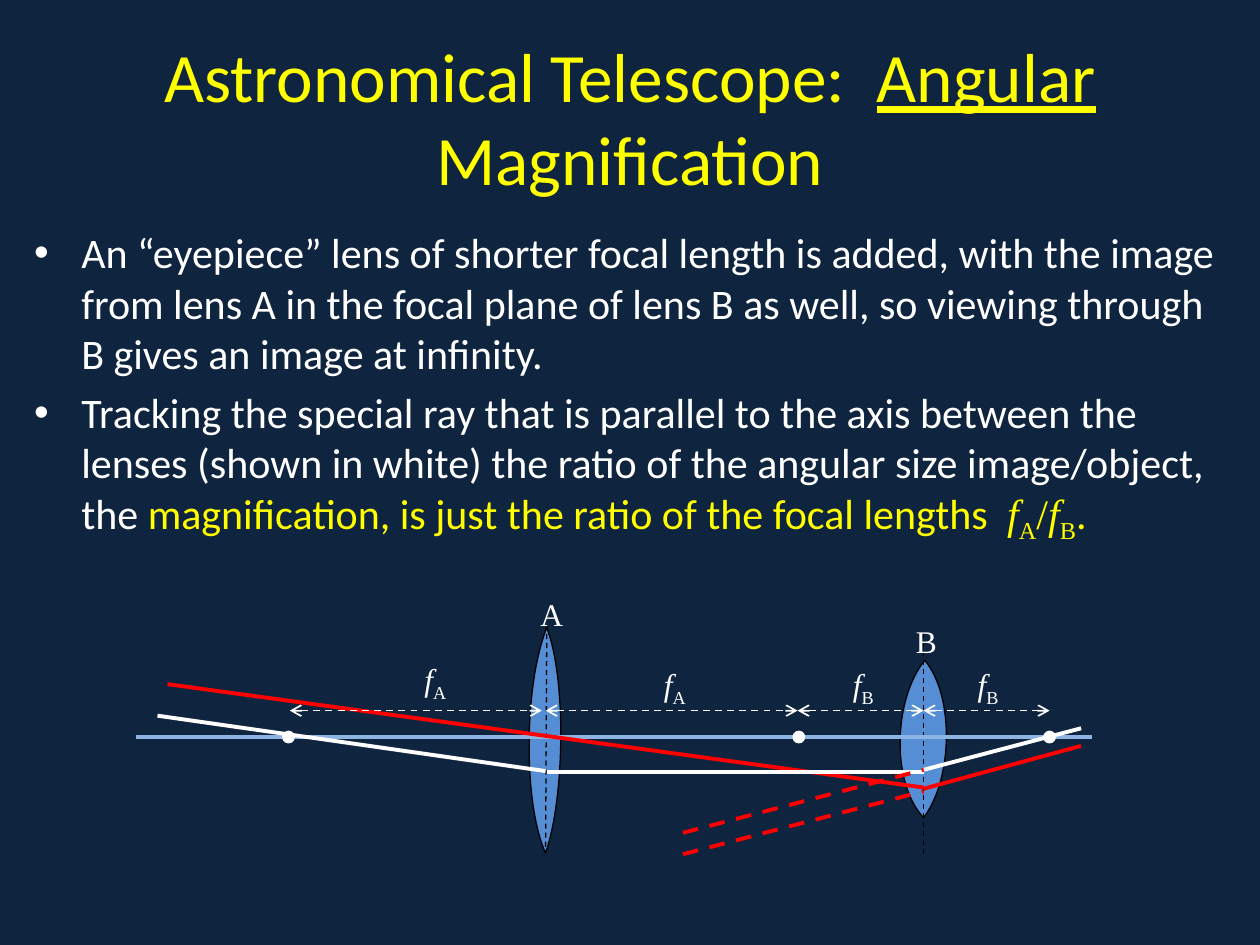
from dataclasses import dataclass

from lxml.etree import SubElement
from pptx import Presentation
from pptx.dml.color import RGBColor as RGB
from pptx.enum.dml import MSO_LINE_DASH_STYLE as Dash
from pptx.enum.shapes import MSO_CONNECTOR as Conn, MSO_SHAPE as Shape
from pptx.enum.text import MSO_AUTO_SIZE as AutoSize, PP_ALIGN as Align
from pptx.oxml.ns import qn
from pptx.util import Inches, Pt

Point = tuple[float, float]


@dataclass(frozen=True)
class Theme:
    background: str = "0F243E"
    white: str = "FFFFFF"
    yellow: str = "FFFF00"
    red: str = "FF0000"
    black: str = "000000"
    lens: str = "558ED5"
    axis: str = "8EB4E3"
    sans: str = "Calibri"
    serif: str = "Times New Roman"
    title_size: float = 39.6
    body_size: float = 24
    label_size: float = 18
    thin: float = 0.75
    measure: float = 1
    ray: float = 2.25


THEME = Theme()


@dataclass(frozen=True)
class Line:
    start: Point
    end: Point
    color: str
    width: float = THEME.ray
    dashed: bool = False
    arrows: bool = False


@dataclass(frozen=True)
class Lens:
    """Outline of two cubic curves, running round from the top point."""
    curves: tuple[tuple[Point, Point, Point, Point], ...]


@dataclass(frozen=True)
class Label:
    left: float
    top: float
    name: str
    focal: bool = False


# Optical parts
AXIS_Y, DOT = 5.85, 0.07
LENSES = [
    Lens((((7.34, 5.24), (7.09, 5.55), (7.07, 6.21), (7.33, 6.49)),
          ((7.33, 6.49), (7.56, 6.19), (7.58, 5.53), (7.34, 5.24)))),
    Lens((((4.34, 4.98), (4.16, 5.43), (4.15, 6.37), (4.33, 6.77)),
          ((4.33, 6.77), (4.48, 6.35), (4.50, 5.40), (4.34, 4.98)))),
]
AXES = [
    Line((4.34, 4.96), (4.33, 6.75), THEME.black, THEME.thin, dashed=True),
    Line((7.33, 5.02), (7.33, 6.8), THEME.black, THEME.thin, dashed=True),
    Line((1.08, AXIS_Y), (8.67, AXIS_Y), THEME.axis),
]
FOCAL_POINTS = [2.29, 6.34, 8.33]
RAYS = [
    Line((1.33, 5.43), (7.33, 6.25), THEME.red),
    Line((4.34, 6.13), (7.33, 6.13), THEME.white),
    Line((7.33, 6.11), (8.58, 5.78), THEME.white),
    Line((1.25, 5.68), (4.33, 6.12), THEME.white),
    Line((7.33, 6.26), (8.58, 5.92), THEME.red),
    Line((5.42, 6.61), (7.33, 6.11), THEME.red, dashed=True),
    Line((5.42, 6.78), (7.33, 6.28), THEME.red, dashed=True),
]
FOCAL_LENGTHS = [
    Line((x1, 5.64), (x2, 5.64), THEME.white, THEME.measure, True, True)
    for x1, x2 in [(2.3, 4.3), (4.33, 6.33), (6.33, 7.33), (7.33, 8.33)]
]
LABELS = [
    Label(4.19, 4.67, "A"),
    Label(7.17, 4.89, "B"),
    Label(3.27, 5.19, "A", focal=True),
    Label(5.17, 5.23, "A", focal=True),
    Label(6.67, 5.23, "B", focal=True),
    Label(7.66, 5.23, "B", focal=True),
]


def add_run(p, text: str, *, size: float, color: str, font: str = THEME.sans,
            italic: bool = False, underline: bool = False,
            subscript: bool = False) -> None:
    r = p.add_run()
    r.text = text
    f = r.font
    f.size, f.name, f.italic, f.underline = Pt(size), font, italic, underline
    f.color.rgb = RGB.from_string(color)
    if subscript:
        r._r.get_or_add_rPr().set("baseline", "-25000")


def add_focal_symbol(p, name: str, size: float, color: str) -> None:
    style = dict(size=size, color=color, font=THEME.serif)
    add_run(p, "f", italic=True, **style)
    add_run(p, name, subscript=True, **style)


def place(sp, left: float, top: float, width: float, height: float) -> None:
    sp.left, sp.top = Inches(left), Inches(top)
    sp.width, sp.height = Inches(width), Inches(height)


def style_shape(sp, fill: str, line: str, width: float) -> None:
    sp.shadow.inherit = False
    sp.fill.solid()
    sp.fill.fore_color.rgb = RGB.from_string(fill)
    sp.line.color.rgb = RGB.from_string(line)
    sp.line.width = Pt(width)


def draw_line(shapes, line: Line) -> None:
    cxn = shapes.add_connector(Conn.STRAIGHT, *map(Inches, line.start + line.end))
    cxn.line.color.rgb = RGB.from_string(line.color)
    cxn.line.width = Pt(line.width)
    if line.dashed:
        cxn.line.dash_style = Dash.DASH
    if line.arrows:
        ln = cxn.line._get_or_add_ln()
        for end in ("a:headEnd", "a:tailEnd"):
            SubElement(ln, qn(end), type="arrow")
    SubElement(cxn._element.spPr, qn("a:effectLst"))


def curve_point(curve: tuple[Point, ...], t: float) -> tuple[int, int]:
    """Point on a cubic curve, in whole slide units."""
    weights = ((1 - t) ** 3, 3 * t * (1 - t) ** 2, 3 * t ** 2 * (1 - t), t ** 3)
    x, y = (Inches(sum(w * c for w, c in zip(weights, axis)))
            for axis in zip(*curve))
    return x, y


def draw_lens(shapes, lens: Lens, steps: int = 24) -> None:
    start, *points = [curve_point(c, i / steps) for c in lens.curves
                      for i in range(steps)]
    builder = shapes.build_freeform(*start)
    builder.add_line_segments(points, close=True)
    style_shape(builder.convert_to_shape(), THEME.lens, THEME.black, THEME.thin)


def draw_focal_point(shapes, x: float) -> None:
    sp = shapes.add_shape(Shape.FLOWCHART_CONNECTOR, Inches(x - DOT / 2),
                          Inches(AXIS_Y - DOT / 2), Inches(DOT), Inches(DOT))
    style_shape(sp, THEME.white, THEME.white, THEME.ray)


def draw_label(shapes, label: Label) -> None:
    sp = shapes.add_textbox(Inches(label.left), Inches(label.top),
                            Inches(0.58), Inches(0.4))
    tf = sp.text_frame
    tf.word_wrap = True
    p = tf.paragraphs[0]
    if label.focal:
        add_focal_symbol(p, label.name, THEME.label_size, THEME.white)
    else:
        add_run(p, label.name, size=THEME.label_size, color=THEME.white,
                font=THEME.serif)


def fill_title(sp) -> None:
    place(sp, 0.5, 0.3, 9, 1.25)
    sp.text_frame.auto_size = AutoSize.NONE
    p = sp.text_frame.paragraphs[0]
    p.alignment = Align.CENTER
    style = dict(size=THEME.title_size, color=THEME.yellow)
    add_run(p, "Astronomical Telescope:  ", **style)
    add_run(p, "Angular", underline=True, **style)
    add_run(p, " Magnification", **style)


def fill_body(sp) -> None:
    place(sp, 0.17, 1.75, 9.67, 4.95)
    tf = sp.text_frame
    tf.auto_size = AutoSize.NONE
    size = THEME.body_size
    add_run(tf.paragraphs[0], "An “eyepiece” lens of shorter focal length is added, "
            "with the image from lens A in the focal plane of lens B as well, "
            "so viewing through B gives an image at infinity.",
            size=size, color=THEME.white)
    p = tf.add_paragraph()
    add_run(p, "Tracking the special ray that is parallel to the axis between the "
            "lenses (shown in white) the ratio of the angular size image/object, "
            "the ", size=size, color=THEME.white)
    add_run(p, "magnification, is just the ratio of the focal lengths  ",
            size=size, color=THEME.yellow)
    add_focal_symbol(p, "A", size, THEME.yellow)
    add_run(p, "/", size=size, color=THEME.yellow, font=THEME.serif)
    add_focal_symbol(p, "B", size, THEME.yellow)
    add_run(p, ".", size=size, color=THEME.yellow)


def main() -> None:
    prs = Presentation()
    prs.slide_width, prs.slide_height = Inches(10), Inches(7.5)
    slide = prs.slides.add_slide(prs.slide_layouts[1])
    slide.background.fill.solid()
    slide.background.fill.fore_color.rgb = RGB.from_string(THEME.background)
    fill_title(slide.shapes.title)
    fill_body(slide.placeholders[1])

    # Ray diagram, from back to front
    for draw, items in [(draw_lens, LENSES), (draw_line, AXES),
                        (draw_focal_point, FOCAL_POINTS), (draw_line, RAYS),
                        (draw_line, FOCAL_LENGTHS), (draw_label, LABELS)]:
        for item in items:
            draw(slide.shapes, item)
    prs.save("out.pptx")


if __name__ == "__main__":
    main()
